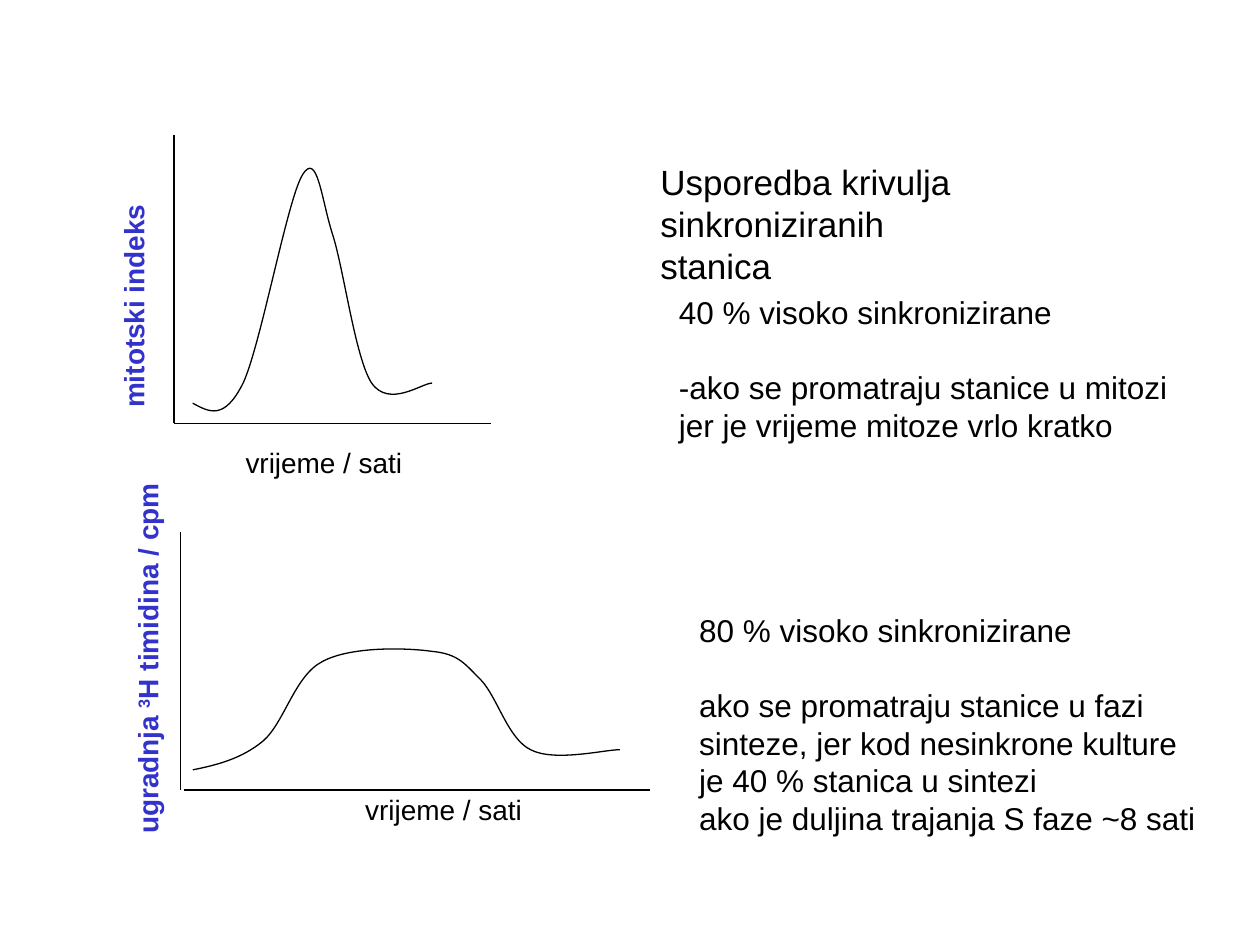
import pptx
import pptx.util
import pptx.dml.color
import pptx.enum.text
import pptx.oxml
from pptx.util import Inches

BLACK, BLUE = "000000", "3333CC"


def colour(value):
    return pptx.dml.color.RGBColor.from_string(value)


def fill_text(box, paragraphs, size, hue=BLACK, bold=False, pitch=None):
    """Each paragraph is (space before in points, [(text, is superscript)])."""
    frame = box.text_frame
    frame.auto_size = pptx.enum.text.MSO_AUTO_SIZE.NONE
    frame.vertical_anchor = pptx.enum.text.MSO_ANCHOR.TOP
    for index, (gap, parts) in enumerate(paragraphs):
        para = frame.paragraphs[0] if index == 0 else frame.add_paragraph()
        para_format = {
            "alignment": pptx.enum.text.PP_ALIGN.LEFT,
            "space_before": pptx.util.Pt(gap),
            "line_spacing": pptx.util.Pt(pitch) if pitch else 1.0,
        }
        for name, value in para_format.items():
            setattr(para, name, value)
        for text, superscript in parts:
            span = para.add_run()
            span.text = text
            span_format = {"name": "Arial", "size": pptx.util.Pt(size), "bold": bold}
            for name, value in span_format.items():
                setattr(span.font, name, value)
            span.font.color.rgb = colour(hue)
            if superscript:
                span.font._rPr.set("baseline", "30000")


deck = pptx.Presentation()
deck.slide_width, deck.slide_height = Inches(10), Inches(7.5)
page = deck.slides.add_slide(deck.slide_layouts[5])

# Heading: the wide right inset sets where the first line breaks
heading = page.shapes.title
heading_place = {"left": 5.14, "top": 1.22, "width": 4.36, "height": 0.77}
for name, value in heading_place.items():
    setattr(heading, name, Inches(value))
heading.text_frame.word_wrap = True
heading.text_frame.margin_right = Inches(1.2)
fill_text(
    heading,
    [(0, [("Usporedba krivulja sinkroniziranih", False)]), (0, [("stanica", False)])],
    20,
    pitch=24,
)

# Axes of the two graphs
axes = [
    (1.38, 1.07, 1.38, 3.36),
    (1.38, 3.36, 3.9, 3.36),
    (1.43, 4.22, 1.43, 6.27),
    (1.46, 6.27, 5.16, 6.27),
]
for ends in axes:
    axis = page.shapes.add_connector(
        pptx.enum.shapes.MSO_CONNECTOR.STRAIGHT, *map(Inches, ends)
    )
    axis.line.color.rgb = colour(BLACK)
    axis.line.width = pptx.util.Pt(0.75)
    pptx.oxml.xmlchemy.OxmlElement  # noqa: B018
    axis._element.spPr.append(pptx.oxml.xmlchemy.OxmlElement("a:effectLst"))

# Curves: a start point, then three points for each cubic segment
synthesis_curve = [
    (1.53, 6.11),
    (1.73, 6.07), (1.92, 6.02), (2.09, 5.88),
    (2.26, 5.73), (2.34, 5.36), (2.56, 5.25),
    (2.78, 5.13), (3.22, 5.14), (3.43, 5.17),
    (3.64, 5.19), (3.69, 5.27), (3.82, 5.4),
    (3.95, 5.54), (4.03, 5.86), (4.21, 5.95),
    (4.4, 6.05), (4.8, 5.95), (4.92, 5.95),
]
mitosis_curve = [
    (1.53, 3.2),
    (1.66, 3.27), (1.78, 3.34), (1.93, 3.04),
    (2.07, 2.74), (2.28, 1.59), (2.4, 1.39),
    (2.52, 1.19), (2.55, 1.58), (2.64, 1.86),
    (2.73, 2.14), (2.82, 2.84), (2.95, 3.04),
    (3.09, 3.24), (3.35, 3.04), (3.43, 3.04),
]
for points in (synthesis_curve, mitosis_curve):
    start, *rest = [(Inches(x), Inches(y)) for x, y in points]
    builder = page.shapes.build_freeform(*start)
    builder.add_line_segments(rest, close=False)
    curve = builder.convert_to_shape()
    curve.shadow.inherit = False
    curve.fill.background()
    curve.line.color.rgb = colour(BLACK)
    curve.line.width = pptx.util.Pt(0.75)
    # Turn every three straight segments into one cubic segment
    segments = curve._element.xpath(".//a:lnTo")
    for first in range(0, len(segments), 3):
        cubic = pptx.oxml.xmlchemy.OxmlElement("a:cubicBezTo")
        segments[first].addprevious(cubic)
        for segment in segments[first:first + 3]:
            cubic.append(segment[0])
            segment.getparent().remove(segment)

# Axis labels: left, top, width, rotation, parts, colour
labels = [
    (1.85, 3.49, 1.45, 0, [("vrijeme / sati", False)], BLACK),
    (2.8, 6.24, 1.45, 0, [("vrijeme / sati", False)], BLACK),
    (0.15, 2.24, 1.82, 270, [("mitotski indeks", False)], BLUE),
    (-0.39, 4.97, 3.12, 270,
     [("ugradnja ", False), ("3", True), ("H timidina / cpm", False)], BLUE),
]
for left, top, width, rotation, parts, hue in labels:
    label = page.shapes.add_textbox(*map(Inches, (left, top, width, 0.37)))
    label.rotation = rotation
    label.text_frame.word_wrap = False
    fill_text(label, [(0, parts)], 16, hue, bold=hue == BLUE)

# Notes beside the graphs: the second line stands one line further down
notes = [
    (5.29, 2.28, 4.08, 1.6, [
        "40 % visoko sinkronizirane",
        "-ako se promatraju stanice u mitozi",
        "jer je vrijeme mitoze vrlo kratko",
    ]),
    (5.45, 4.8, 4.18, 1.92, [
        "80 % visoko sinkronizirane",
        "ako se promatraju stanice u fazi",
        "sinteze, jer kod nesinkrone kulture",
        "je 40 % stanica u sintezi",
        "ako je duljina trajanja S faze ~8 sati",
    ]),
]
for left, top, width, height, lines in notes:
    note = page.shapes.add_textbox(*map(Inches, (left, top, width, height)))
    note.text_frame.word_wrap = False
    paragraphs = [
        (21.5 if index == 1 else 0, [(line, False)]) for index, line in enumerate(lines)
    ]
    fill_text(note, paragraphs, 18, pitch=21.5)

deck.save("out.pptx")
